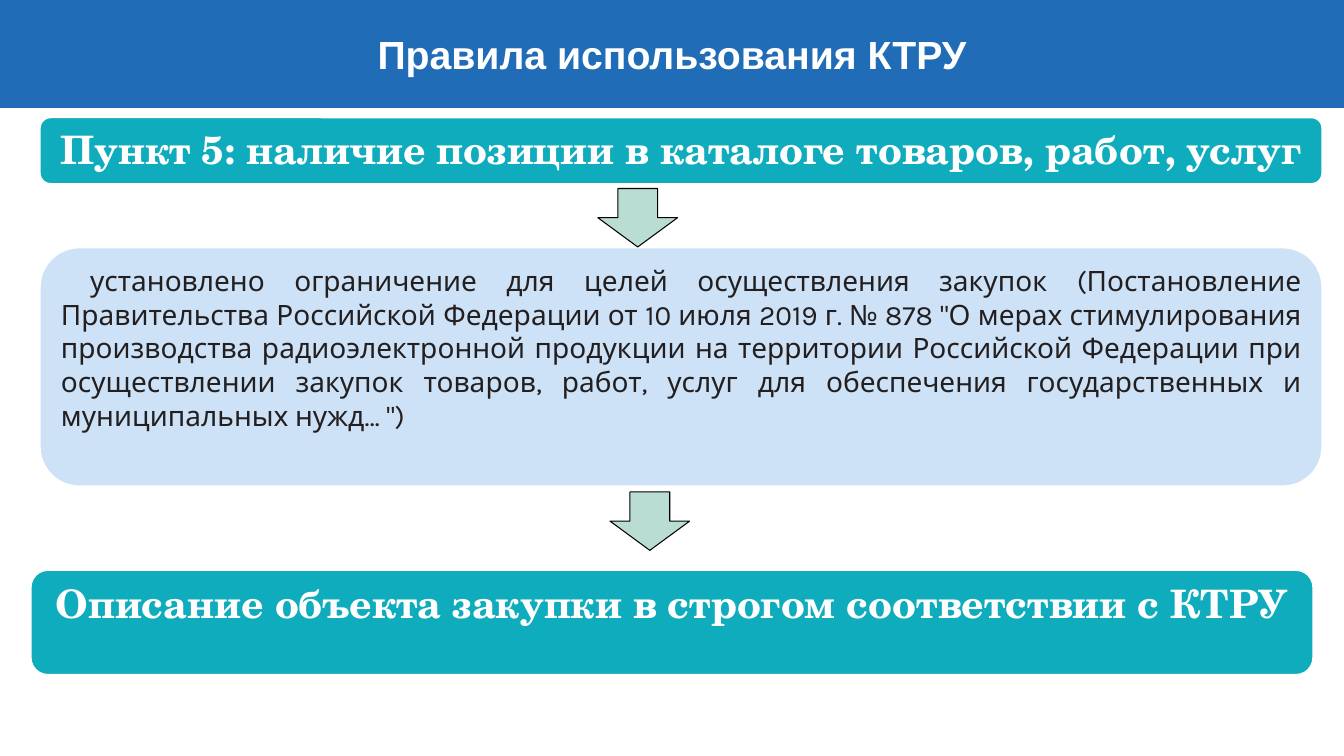
"""Build the slide on the rules for using the KTRU catalogue."""
from pptx import Presentation
from pptx.dml.color import RGBColor
from pptx.enum.shapes import MSO_SHAPE as Kind
from pptx.enum.text import MSO_ANCHOR as Anchor, PP_ALIGN as Align
from pptx.util import Inches, Pt

BLUE = RGBColor(0x20, 0x6C, 0xB6)
TEAL = RGBColor(0x0F, 0xAC, 0xBD)
PALE = RGBColor(0xCD, 0xE2, 0xF6)
MINT = RGBColor(0xB9, 0xDC, 0xD3)
INK = RGBColor(0x23, 0x1F, 0x20)
WHITE = RGBColor(0xFF, 0xFF, 0xFF)
BLACK = RGBColor(0x00, 0x00, 0x00)

HEAD = {"name": "Arial", "size": Pt(28), "bold": True}
BAND = {"name": "TeX Gyre Schola", "size": Pt(28), "bold": True}
BODY = {"name": "Karla", "size": Pt(20), "bold": False}

deck = Presentation()
deck.slide_width, deck.slide_height = Inches(13.33), Inches(7.5)
slide = deck.slides.add_slide(deck.slide_layouts[5])


def place(item, left, top, width, height):
    item.left, item.top = Inches(left), Inches(top)
    item.width, item.height = Inches(width), Inches(height)


def write(item, text, style, color, align, anchor):
    frame = item.text_frame
    frame.word_wrap = True
    frame.vertical_anchor = anchor
    par = frame.paragraphs[0]
    par.text, par.alignment = text, align
    for key, value in style.items():
        setattr(par.font, key, value)
    par.font.color.rgb = color
    return par


title = slide.shapes.title
place(title, 0, 0, 13.33, 1.07)
title.fill.solid()
title.fill.fore_color.rgb = BLUE
write(title, "Правила использования КТРУ", HEAD, WHITE, Align.CENTER, Anchor.MIDDLE)

rule = (
    "установлено ограничение для целей осуществления закупок "
    "(Постановление Правительства Российской Федерации от 10 июля 2019 г. "
    "№ 878 \"О мерах стимулирования производства радиоэлектронной продукции "
    "на территории Российской Федерации при осуществлении закупок товаров, "
    "работ, услуг для обеспечения государственных и муниципальных нужд… \")"
)
steps = [
    (0.39, 1.16, 0.67, TEAL, BAND, WHITE, Align.CENTER,
     "Пункт 5: наличие позиции в каталоге товаров, работ, услуг"),
    (0.39, 2.45, 2.38, PALE, BODY, INK, Align.JUSTIFY, rule),
    (0.3, 5.65, 1.05, TEAL, BAND, WHITE, Align.CENTER,
     "Описание объекта закупки в строгом соответствии с КТРУ"),
]
for left, top, height, fill, style, color, align, text in steps:
    box = slide.shapes.add_shape(Kind.ROUNDED_RECTANGLE, 0, 0, 0, 0)
    place(box, left, top, 12.73, height)
    box.shadow.inherit = False
    box.fill.solid()
    box.fill.fore_color.rgb = fill
    box.line.color.rgb, box.line.width = WHITE, Pt(2)
    par = write(box, text, style, color, align, Anchor.TOP)
    if style is BODY:
        par.line_spacing = Pt(24)
        par._p.get_or_add_pPr().set("indent", str(Inches(0.29)))

for left, top in [(5.93, 1.87), (6.05, 4.88)]:
    arrow = slide.shapes.add_shape(Kind.DOWN_ARROW, 0, 0, 0, 0)
    place(arrow, left, top, 0.79, 0.58)
    arrow.shadow.inherit = False
    arrow.fill.solid()
    arrow.fill.fore_color.rgb = MINT
    arrow.line.color.rgb, arrow.line.width = BLACK, Pt(0.75)

deck.save("out.pptx")
